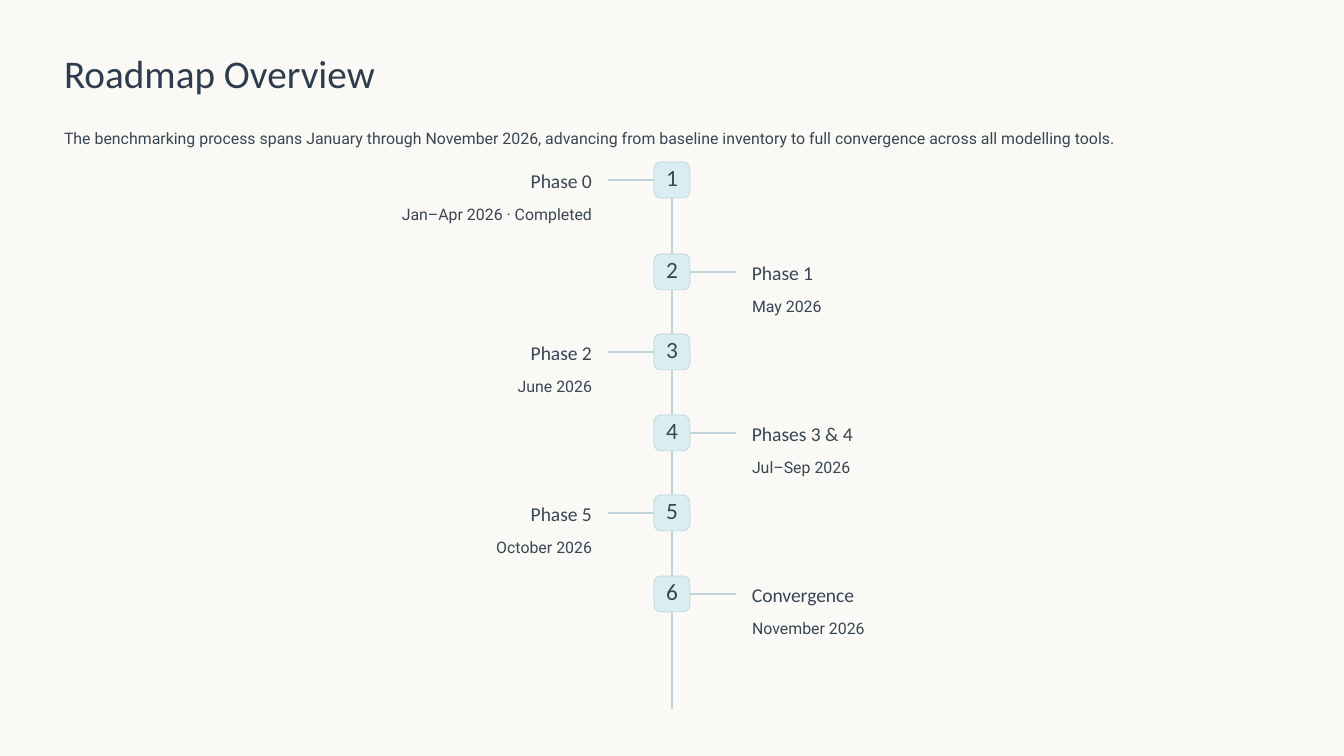
from pptx import Presentation
from pptx.dml.color import RGBColor
from pptx.enum.shapes import MSO_CONNECTOR, MSO_SHAPE
from pptx.enum.text import MSO_ANCHOR, MSO_AUTO_SIZE, PP_ALIGN
from pptx.oxml.ns import qn
from pptx.util import Pt
from lxml.etree import SubElement

PX = 9144000 / 1344  # EMU per px


def box(*nums):
    return [round(n * PX) for n in nums]


def write(shape, text, size, lead, font="Calibri", hue="384653",
          align=PP_ALIGN.LEFT, anchor=MSO_ANCHOR.TOP):
    frame = shape.text_frame
    frame.margin_left = frame.margin_right = 0
    frame.margin_top = frame.margin_bottom = 0
    frame.auto_size = MSO_AUTO_SIZE.NONE
    frame.word_wrap = False
    frame.vertical_anchor = anchor
    frame.text = text
    para = frame.paragraphs[0]
    para.alignment = align
    para.line_spacing = Pt(lead)
    para.font.name = font
    para.font.size = Pt(size)
    para.font.color.rgb = RGBColor.from_string(hue)


deck = Presentation()
deck.slide_width, deck.slide_height = box(1344, 756)
slide = deck.slides.add_slide(deck.slide_layouts[5])
shapes = slide.shapes
slide.background.fill.solid()
slide.background.fill.fore_color.rgb = RGBColor.from_string("FAF9F5")

# Title and intro
title = shapes.title
title.left, title.top, title.width, title.height = box(64, 47, 400, 50)
write(title, "Roadmap Overview", 21, 26.5, hue="2E3C4E")
intro = shapes.add_textbox(*box(64, 125, 1216, 23))
write(intro, "The benchmarking process spans January through November 2026, "
      "advancing from baseline inventory to full convergence across all "
      "modelling tools.", 8.5, 12, "Roboto")

# Central spine
MID, SIDE = 672, 36
lines = [shapes.add_connector(MSO_CONNECTOR.STRAIGHT, *box(MID, 162, MID, 709))]

# Phases, alternating left and right of the spine
phases = [
    (162, "Phase 0", "Jan–Apr 2026 · Completed"),
    (254, "Phase 1", "May 2026"),
    (334, "Phase 2", "June 2026"),
    (415, "Phases 3 & 4", "Jul–Sep 2026"),
    (495, "Phase 5", "October 2026"),
    (576, "Convergence", "November 2026"),
]
for i, (top, name, date) in enumerate(phases):
    # Numbered badge
    badge = shapes.add_shape(MSO_SHAPE.ROUNDED_RECTANGLE,
                             *box(MID - SIDE / 2, top, SIDE, SIDE))
    badge.adjustments[0] = 0.19
    badge.shadow.inherit = False
    badge.fill.solid()
    badge.fill.fore_color.rgb = RGBColor.from_string("D9EDF2")
    badge.line.color.rgb = RGBColor.from_string("BFD3D8")
    badge.line.width = Pt(0.38)
    write(badge, str(i + 1), 12.5, 12.5,
          align=PP_ALIGN.CENTER, anchor=MSO_ANCHOR.MIDDLE)

    # Branch from the badge to its labels
    left = i % 2 == 0
    end = MID - 64 if left else MID + 64
    mid = top + SIDE / 2
    branch = shapes.add_connector(MSO_CONNECTOR.STRAIGHT, *box(MID, mid, end, mid))
    branch.begin_connect(badge, 1 if left else 3)
    lines.append(branch)

    # Phase name and date
    align = PP_ALIGN.RIGHT if left else PP_ALIGN.LEFT
    label = shapes.add_textbox(*box(392 if left else 752, top + 6, 200, 25))
    write(label, name, 10.5, 13, align=align)
    when = shapes.add_textbox(*box(64 if left else 752, top + 39, 528, 23))
    write(when, date, 8.5, 12, "Roboto", align=align)

# Line style
for line in lines:
    line.line.color.rgb = RGBColor.from_string("BFD3D8")
    line.line.width = Pt(1.25)
    SubElement(line._element.spPr, qn("a:effectLst"))

deck.save("out.pptx")
